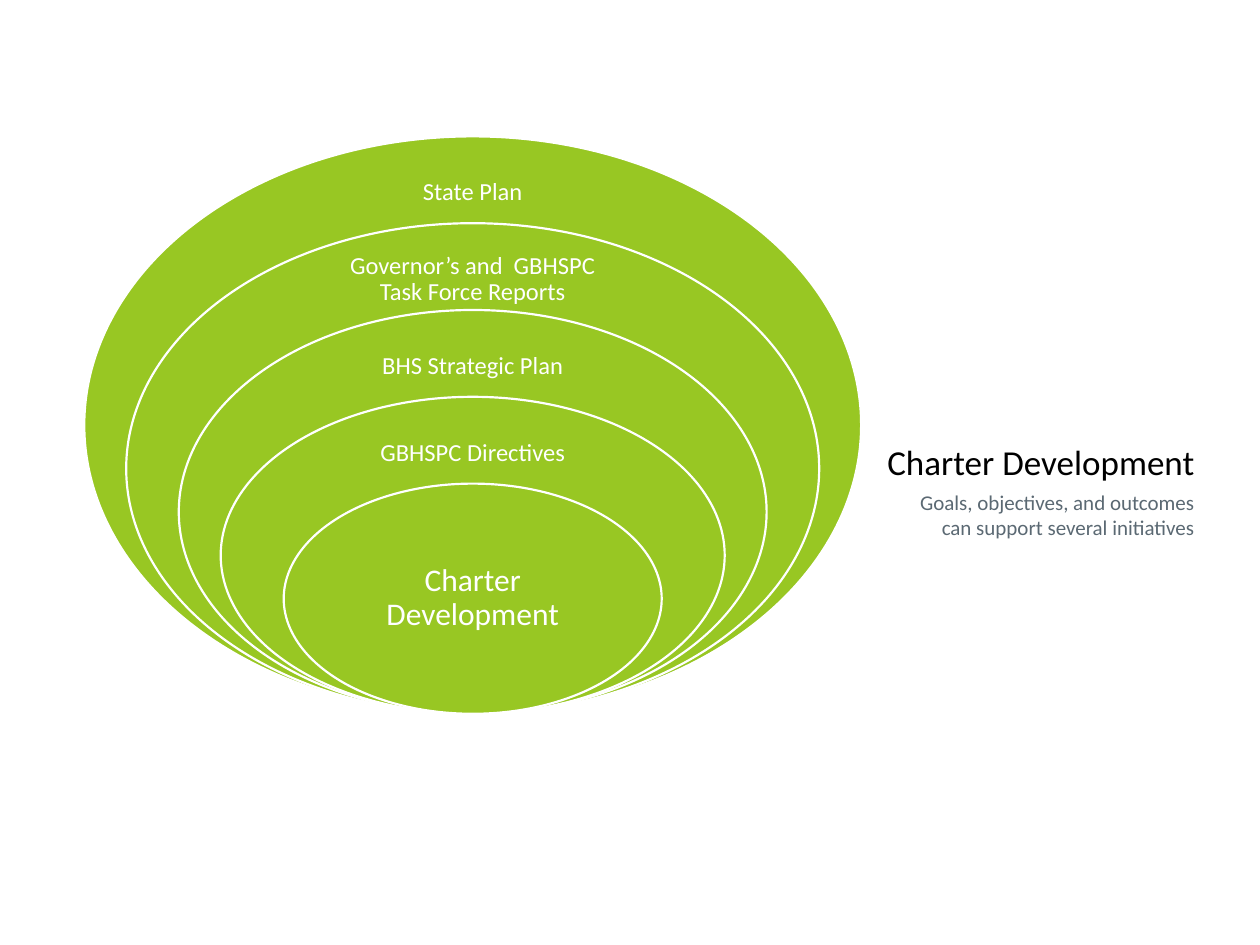
from pptx import Presentation
from pptx.dml.color import RGBColor
from pptx.enum.shapes import MSO_SHAPE
from pptx.enum.text import MSO_ANCHOR, MSO_AUTO_SIZE, PP_ALIGN
from pptx.util import Cm, Pt

ELLIPSE = MSO_SHAPE.OVAL
TOP, MIDDLE, BOTTOM = MSO_ANCHOR.TOP, MSO_ANCHOR.MIDDLE, MSO_ANCHOR.BOTTOM
CENTER, RIGHT = PP_ALIGN.CENTER, PP_ALIGN.RIGHT
FIXED_SIZE = MSO_AUTO_SIZE.NONE

TITLE = "Charter Development"
SUBTITLE = "Goals, objectives, and outcomes can support several initiatives"
# label, ellipse width, label width (cm), from the outermost ring inwards
RINGS = [
    ("State Plan", 15.66, 5.87),
    ("Governor’s and  GBHSPC Task Force Reports", 13.97, 6.02),
    ("BHS Strategic Plan", 11.85, 6.15),
    ("GBHSPC Directives", 10.16, 5.49),
]
CORE = ("Charter Development", 7.62, 5.38)

THEME = {
    "font": "Calibri",
    "green": RGBColor(0x98, 0xC7, 0x23),
    "white": RGBColor(0xFF, 0xFF, 0xFF),
    "black": RGBColor(0x00, 0x00, 0x00),
    "slate": RGBColor(0x5B, 0x69, 0x73),
    "title": Pt(20),
    "core": Pt(18),
    "ring": Pt(14),
    "subtitle": Pt(12),
    "outline": Pt(1.25),
}

# Diagram geometry in cm: all ellipses share a centre line and a bottom edge
CENTER_X, BASE, OUTER_HEIGHT, RING_STEP = 9.53, 14.39, 11.64, 1.75
LABEL_DROP, LABEL_HEIGHT, CORE_LABEL_HEIGHT = 1.14, 1.15, 2.33


def write_text(box, text, size, color, align, anchor, inset=(0.25, 0.13), spacing=1.0):
    frame = box.text_frame
    frame.text = text
    side, edge = (Cm(value) for value in inset)
    frame_format = {
        "word_wrap": True, "auto_size": FIXED_SIZE, "vertical_anchor": anchor,
        "margin_left": side, "margin_right": side,
        "margin_top": edge, "margin_bottom": edge,
    }
    para = frame.paragraphs[0]
    para_format = {"alignment": align, "line_spacing": spacing, "space_before": Pt(0)}
    font_format = {"name": THEME["font"], "size": THEME[size], "bold": False}
    span = para.runs[0]
    for target, values in ((frame, frame_format), (para, para_format), (span.font, font_format)):
        for name, value in values.items():
            setattr(target, name, value)
    span.font.color.rgb = THEME[color]


def add_ring(shapes, width, height):
    ring = shapes.add_shape(
        ELLIPSE, Cm(CENTER_X - width / 2), Cm(BASE - height), Cm(width), Cm(height))
    ring.shadow.inherit = False
    ring.fill.solid()
    ring.fill.fore_color.rgb = THEME["green"]
    ring.line.color.rgb = THEME["white"]
    ring.line.width = THEME["outline"]


def add_label(shapes, text, width, height, center_y, size, inset):
    label = shapes.add_textbox(
        Cm(CENTER_X - width / 2), Cm(center_y - height / 2), Cm(width), Cm(height))
    write_text(label, text, size, "white", CENTER, MIDDLE, (inset, inset), 0.9)


def add_diagram(page):
    shapes = page.shapes.add_group_shape().shapes
    for index, (text, width, label_width) in enumerate(RINGS):
        height = OUTER_HEIGHT - index * RING_STEP
        add_ring(shapes, width, height)
        add_label(shapes, text, label_width, LABEL_HEIGHT,
                  BASE - height + LABEL_DROP, "ring", 0.28)
    text, width, label_width = CORE
    height = OUTER_HEIGHT - len(RINGS) * RING_STEP
    add_ring(shapes, width, height)
    add_label(shapes, text, label_width, CORE_LABEL_HEIGHT, BASE - height / 2, "core", 0.36)


def main():
    deck = Presentation()
    deck.slide_width, deck.slide_height = Cm(25.4), Cm(19.05)
    page = deck.slides.add_slide(deck.slide_layouts[5])

    title = page.shapes.title
    title.left, title.top, title.width, title.height = Cm(17.35), Cm(4.65), Cm(6.98), Cm(5.21)
    write_text(title, TITLE, "title", "black", RIGHT, BOTTOM)

    add_diagram(page)

    subtitle = page.shapes.add_textbox(Cm(18.2), Cm(9.74), Cm(6.13), Cm(4.52))
    write_text(subtitle, SUBTITLE, "subtitle", "slate", RIGHT, TOP)

    deck.save("out.pptx")


if __name__ == "__main__":
    main()
